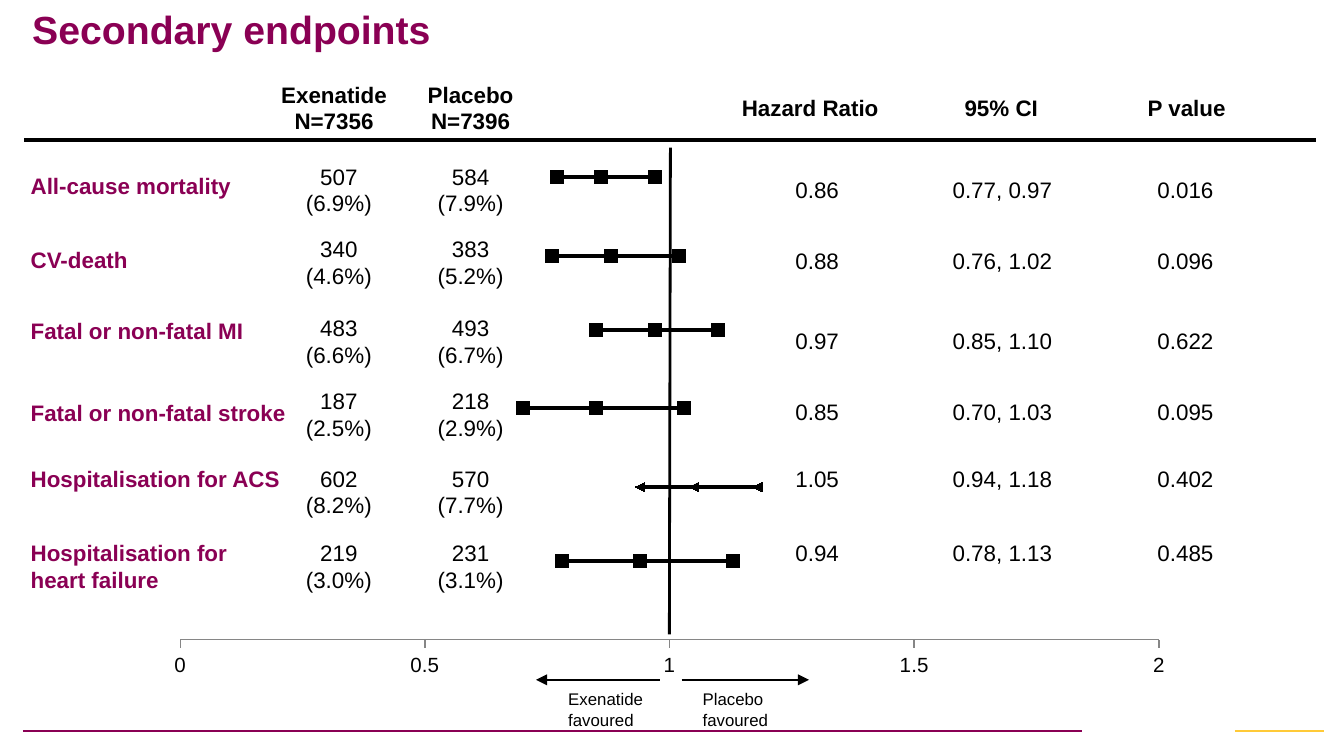
from lxml import etree
from pptx import Presentation
from pptx.chart.data import XyChartData
from pptx.dml.color import RGBColor
from pptx.enum.chart import XL_CHART_TYPE as ChartType
from pptx.enum.chart import XL_MARKER_STYLE as Marker
from pptx.enum.chart import XL_TICK_MARK as TickMark
from pptx.enum.shapes import MSO_CONNECTOR as Connector
from pptx.enum.text import MSO_ANCHOR as Anchor
from pptx.enum.text import PP_ALIGN as Align
from pptx.oxml import parse_xml
from pptx.oxml.ns import nsdecls, qn
from pptx.util import Cm, Pt

COLORS = {"plum": "8A0054", "gold": "FFCA38", "black": "000000", "axis": "868686"}
FONT = "Arial"

# Column heads: left, top offset, width, text, alignment
HEADS = [
    (4.98, 0, 2.67, "Exenatide\nN=7356", Align.CENTER),
    (7.65, 0, 2.49, "Placebo\nN=7396", Align.CENTER),
    (13.77, 0.25, 3.3, "Hazard Ratio", Align.LEFT),
    (17.98, 0.25, 2.49, "95% CI", Align.LEFT),
    (21.44, 0.25, 2.49, "P value", Align.LEFT),
]
COUNT_LEFTS = (5.16, 7.65)
VALUE_LEFTS = (14.2, 17.7, 21.16)
CELL_WIDTH = 2.49

# Row top, label drop, label width, value drop, label, counts, ratio, interval, P
ROWS = [
    (2.95, 0.18, 4.4, 0.25, "All-cause mortality",
     ("507\n(6.9%)", "584\n(7.9%)"), "0.86", ("0.77", "0.97"), "0.016"),
    (4.32, 0.2, 4.4, 0.22, "CV-death",
     ("340\n(4.6%)", "383\n(5.2%)"), "0.88", ("0.76", "1.02"), "0.096"),
    (5.82, 0.05, 4.55, 0.23, "Fatal or non-fatal MI",
     ("483\n(6.6%)", "493\n(6.7%)"), "0.97", ("0.85", "1.10"), "0.622"),
    (7.19, 0.23, 5.4, 0.22, "Fatal or non-fatal stroke",
     ("187\n(2.5%)", "218\n(2.9%)"), "0.85", ("0.70", "1.03"), "0.095"),
    (8.66, 0, 5.23, 0, "Hospitalisation for ACS",
     ("602\n(8.2%)", "570\n(7.7%)"), "1.05", ("0.94", "1.18"), "0.402"),
    (10.06, 0, 4.4, 0, "Hospitalisation for heart failure",
     ("219\n(3.0%)", "231\n(3.1%)"), "0.94", ("0.78", "1.13"), "0.485"),
]
HEIGHTS = (100, 83, 67, 50, 33, 17)  # chart level of each row


def rgb(name):
    return RGBColor.from_string(COLORS[name])


def add_text(slide, box, text, size=12, color="black", bold=False, align=Align.LEFT):
    left, top, width, height = box
    shape = slide.shapes.add_textbox(Cm(left), Cm(top), Cm(width), Cm(height))
    frame = shape.text_frame
    frame.word_wrap = True
    frame.text = text
    for paragraph in frame.paragraphs:
        paragraph.alignment = align
        for run in paragraph.runs:
            run.font.name = FONT
            run.font.size = Pt(size)
            run.font.bold = bold
            run.font.color.rgb = rgb(color)
    return shape


def add_line(slide, start, end, width, color="black", arrow=False):
    line = slide.shapes.add_connector(
        Connector.STRAIGHT, Cm(start[0]), Cm(start[1]), Cm(end[0]), Cm(end[1]))
    line.line.width = Pt(width)
    line.line.color.rgb = rgb(color)
    if arrow:
        etree.SubElement(line.line._get_or_add_ln(), qn("a:tailEnd"), type="triangle")
    etree.SubElement(line._element.spPr, qn("a:effectLst"))


def add_title(slide, box):
    frame = add_text(slide, box, "Secondary endpoints", 21, "plum", True).text_frame
    frame.vertical_anchor = Anchor.MIDDLE
    frame.margin_left = frame.margin_right = Cm(0.18)
    frame.margin_top = frame.margin_bottom = Cm(0.1)
    frame.paragraphs[0].line_spacing = 0.9


def add_footer_rules(slide, top):
    add_line(slide, (0.43, top), (20.45, top), 1, "plum")
    add_line(slide, (23.34, top), (25.02, top), 1, "gold")


def add_heads(slide, top):
    for left, drop, width, text, align in HEADS:
        height = 1.28 if "\n" in text else 0.77
        add_text(slide, (left, top + drop, width, height), text, bold=True, align=align)
    add_line(slide, (0.46, top + 1.24), (24.87, top + 1.24), 2.25)


def add_row(slide, left, row):
    top, label_drop, label_width, value_drop, label, counts, ratio, interval, p_value = row
    add_text(slide, (left, top + label_drop, label_width, 0.77), label,
             color="plum", bold=True)
    for cell_left, text in zip(COUNT_LEFTS, counts):
        add_text(slide, (cell_left, top, CELL_WIDTH, 1.28), text, align=Align.CENTER)
    for cell_left, text in zip(VALUE_LEFTS, (ratio, ", ".join(interval), p_value)):
        add_text(slide, (cell_left, top + value_drop, CELL_WIDTH, 0.77), text,
                 align=Align.CENTER)


def set_plot_area(chart, x, y, w, h):
    parts = "".join(f'<c:{key} val="{value}"/>'
                    for key, value in zip("xywh", (x, y, w, h)))
    layout = parse_xml(
        f'<c:layout {nsdecls("c")}><c:manualLayout><c:layoutTarget val="inner"/>'
        f'<c:xMode val="edge"/><c:yMode val="edge"/>{parts}</c:manualLayout></c:layout>')
    plot_area = chart._chartSpace.chart.plotArea
    for old in plot_area.findall(qn("c:layout")):
        plot_area.remove(old)
    plot_area.insert(0, layout)


def add_forest_plot(slide, box):
    data = XyChartData()
    for number, (row, level) in enumerate(zip(ROWS, HEIGHTS), 1):
        series = data.add_series(f"Series {number}")
        for value in (row[6], *row[7]):
            series.add_data_point(float(value), level)
    chart = slide.shapes.add_chart(
        ChartType.XY_SCATTER_LINES, *(Cm(length) for length in box), data).chart
    chart.has_legend = chart.has_title = False
    chart.font.name, chart.font.size = "Calibri", Pt(10)
    chart.font.color.rgb = rgb("black")
    chart.plots[0].vary_by_categories = False
    set_plot_area(chart, 0.026, 0.012, 0.948, 0.905)

    # Axes
    axes = ((chart.category_axis, 2, 0.5), (chart.value_axis, 117, 17))
    for axis, maximum, step in axes:
        axis.minimum_scale, axis.maximum_scale, axis.major_unit = 0, maximum, step
        axis.has_major_gridlines = False
    ratio_axis = chart.category_axis
    ratio_axis.major_tick_mark = TickMark.OUTSIDE
    ratio_axis.tick_labels.font.name = FONT
    ratio_axis.tick_labels.font.size = Pt(11)
    ratio_axis.tick_labels.number_format = "General"
    ratio_axis.tick_labels.number_format_is_linked = False
    ratio_axis.format.line.color.rgb = rgb("axis")
    chart.value_axis.visible = False

    # Intervals with their estimates; the ACS row keeps the automatic marker
    for row, series in zip(ROWS, chart.plots[0].series):
        automatic = row[4].endswith("ACS")
        series.smooth = False
        series.format.line.width = Pt(2.25)
        series.format.line.color.rgb = rgb("black")
        marker = series.marker
        marker.style = Marker.AUTOMATIC if automatic else Marker.SQUARE
        marker.size = 5 if automatic else 7
        marker.format.fill.solid()
        marker.format.fill.fore_color.rgb = rgb("black")
        marker.format.line.color.rgb = rgb("black")


def add_direction_key(slide, top):
    sides = (("Exenatide", 12.47, 10.13, 10.49), ("Placebo", 12.88, 15.29, 13.03))
    for name, start, end, left in sides:
        add_line(slide, (start, top), (end, top), 1, arrow=True)
        add_text(slide, (left, top + 0.05, 2.21, 1.02), f"{name}\nfavoured", 9)


def main():
    presentation = Presentation()
    presentation.slide_width, presentation.slide_height = Cm(25.4), Cm(14.29)
    slide = presentation.slides.add_slide(presentation.slide_layouts[6])
    add_footer_rules(slide, 13.82)
    add_title(slide, (0.43, -0.15, 24.74, 1.5))
    add_forest_plot(slide, (2.9, 1.73, 19.51, 11.3))
    add_line(slide, (12.65, 11.99), (12.67, 2.79), 1.5)  # line of no effect
    add_heads(slide, 1.4)
    for row in ROWS:
        add_row(slide, 0.33, row)
    add_direction_key(slide, 12.85)
    presentation.save("out.pptx")


if __name__ == "__main__":
    main()
